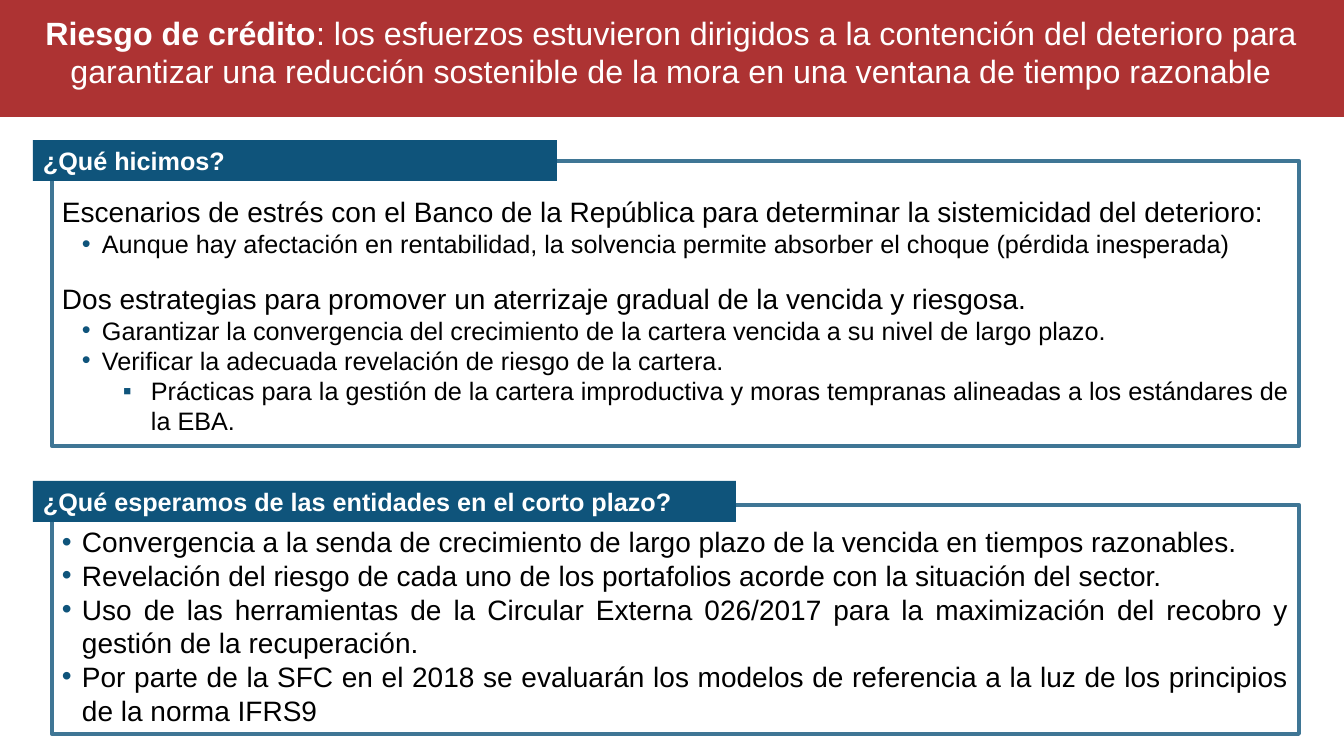
"""Build the credit risk slide with its two framed sections."""
from lxml import etree
from pptx import Presentation
from pptx import util as u
from pptx.dml.color import RGBColor
from pptx.enum import shapes, text
from pptx.oxml.ns import qn

RED, NAVY, STEEL, WHITE, BLACK = "AD3333", "0F547B", "3F7695", "FFFFFF", "000000"
FONT = "Arial"
HEADLINE = [
    ("Riesgo de crédito", True),
    (": los esfuerzos estuvieron dirigidos a la contención del deterioro para "
     "garantizar una reducción sostenible de la mora en una ventana de tiempo razonable", False),
]
# style: level, left margin px, hanging px, bullet, size pt, space before pt
STYLES = {
    "lead": (0, 0, 0, None, 20, 0),
    "next lead": (0, 0, 0, None, 20, 16),
    "point": (0, 20, 20, "•", 20, 0),
    "detail": (1, 40, 20, "•", 18, 0),
    "subdetail": (2, 89, 28, "▪", 18, 0),
}
SECTIONS = [
    {"heading": "¿Qué hicimos?", "tab": (140, 524), "frame": (161, 285), "inset": 34, "lines": [
        ("lead", "Escenarios de estrés con el Banco de la República para determinar la "
                 "sistemicidad del deterioro:"),
        ("detail", "Aunque hay afectación en rentabilidad, la solvencia permite absorber el "
                   "choque (pérdida inesperada)"),
        ("next lead", "Dos estrategias para promover un aterrizaje gradual de la vencida y riesgosa."),
        ("detail", "Garantizar la convergencia del crecimiento de la cartera vencida a su nivel "
                   "de largo plazo."),
        ("detail", "Verificar la adecuada revelación de riesgo de la cartera."),
        ("subdetail", "Prácticas para la gestión de la cartera improductiva y moras tempranas "
                      "alineadas a los estándares de la EBA."),
    ]},
    {"heading": "¿Qué esperamos de las entidades en el corto plazo?", "tab": (481, 703),
     "frame": (505, 229), "inset": 20, "lines": [
        ("point", "Convergencia a la senda de crecimiento de largo plazo de la vencida en "
                  "tiempos razonables."),
        ("point", "Revelación del riesgo de cada uno de los portafolios acorde con la "
                  "situación del sector."),
        ("point", "Uso de las herramientas de la Circular Externa 026/2017 para la maximización "
                  "del recobro y gestión de la recuperación."),
        ("point", "Por parte de la SFC en el 2018 se evaluarán los modelos de referencia a la "
                  "luz de los principios de la norma IFRS9"),
    ]},
]
WIDTH, HEIGHT = 1344, 756
TAB_LEFT, TAB_HEIGHT = 33, 41
FRAME_LEFT, FRAME_WIDTH = 52, 1247
BAND_HEIGHT = 117


def px(length):
    return u.Emu(round(length * 914400 / 100.8))


def color(value):
    return RGBColor.from_string(value)


def set_font(font, size, value, bold=None):
    font.name, font.size, font.bold = FONT, u.Pt(size), bold
    font.color.rgb = color(value)


def set_insets(frame, top=5, bottom=5):
    frame.word_wrap = True
    frame.auto_size = text.MSO_AUTO_SIZE.NONE
    frame.margin_left = frame.margin_right = px(10)
    frame.margin_top, frame.margin_bottom = px(top), px(bottom)


def add_box(slide, left, top, width, height):
    box = slide.shapes.add_shape(
        shapes.MSO_SHAPE.RECTANGLE, px(left), px(top), px(width), px(height))
    box.shadow.inherit = False
    return box


def add_headline(slide):
    headline = slide.shapes.title
    headline.left, headline.top = px(0), px(0)
    headline.width, headline.height = px(WIDTH), px(BAND_HEIGHT)
    headline.fill.solid()
    headline.fill.fore_color.rgb = color(RED)
    frame = headline.text_frame
    set_insets(frame, bottom=19)
    frame.vertical_anchor = text.MSO_ANCHOR.MIDDLE
    paragraph = frame.paragraphs[0]
    paragraph.alignment = text.PP_ALIGN.CENTER
    for wording, bold in HEADLINE:
        run = paragraph.add_run()
        run.text = wording
        set_font(run.font, 23, WHITE, bold)


def write_line(paragraph, style, wording):
    level, margin, hanging, bullet, size, before = STYLES[style]
    paragraph.text = wording
    paragraph.level = level
    paragraph.alignment = text.PP_ALIGN.JUSTIFY
    if before:
        paragraph.space_before = u.Pt(before)
    properties = paragraph._p.get_or_add_pPr()
    properties.set("marL", str(px(margin)))
    properties.set("indent", str(px(-hanging)))
    if bullet:
        tint = etree.SubElement(properties, qn("a:buClr"))
        etree.SubElement(tint, qn("a:srgbClr"), val=NAVY)
        etree.SubElement(properties, qn("a:buFont"), typeface=FONT)
        etree.SubElement(properties, qn("a:buChar"), char=bullet)
    set_font(paragraph.font, size, BLACK)


def add_section(slide, section):
    top, height = section["frame"]
    body = add_box(slide, FRAME_LEFT, top, FRAME_WIDTH, height)
    body.fill.background()
    body.line.color.rgb = color(STEEL)
    body.line.width = u.Pt(3)
    frame = body.text_frame
    set_insets(frame, top=section["inset"])
    frame.vertical_anchor = text.MSO_ANCHOR.TOP
    for index, (style, wording) in enumerate(section["lines"]):
        paragraph = frame.add_paragraph() if index else frame.paragraphs[0]
        write_line(paragraph, style, wording)

    top, width = section["tab"]
    tab = add_box(slide, TAB_LEFT, top, width, TAB_HEIGHT)
    tab.fill.solid()
    tab.fill.fore_color.rgb = color(NAVY)
    tab.line.fill.background()
    set_insets(tab.text_frame)
    tab.text_frame.vertical_anchor = text.MSO_ANCHOR.TOP
    heading = tab.text_frame.paragraphs[0]
    heading.text = section["heading"]
    heading.alignment = text.PP_ALIGN.LEFT
    set_font(heading.font, 18, WHITE, True)


def main():
    deck = Presentation()
    deck.slide_width, deck.slide_height = px(WIDTH), px(HEIGHT)
    slide = deck.slides.add_slide(deck.slide_layouts[5])
    add_headline(slide)
    for section in SECTIONS:
        add_section(slide, section)
    deck.save("out.pptx")


if __name__ == "__main__":
    main()
